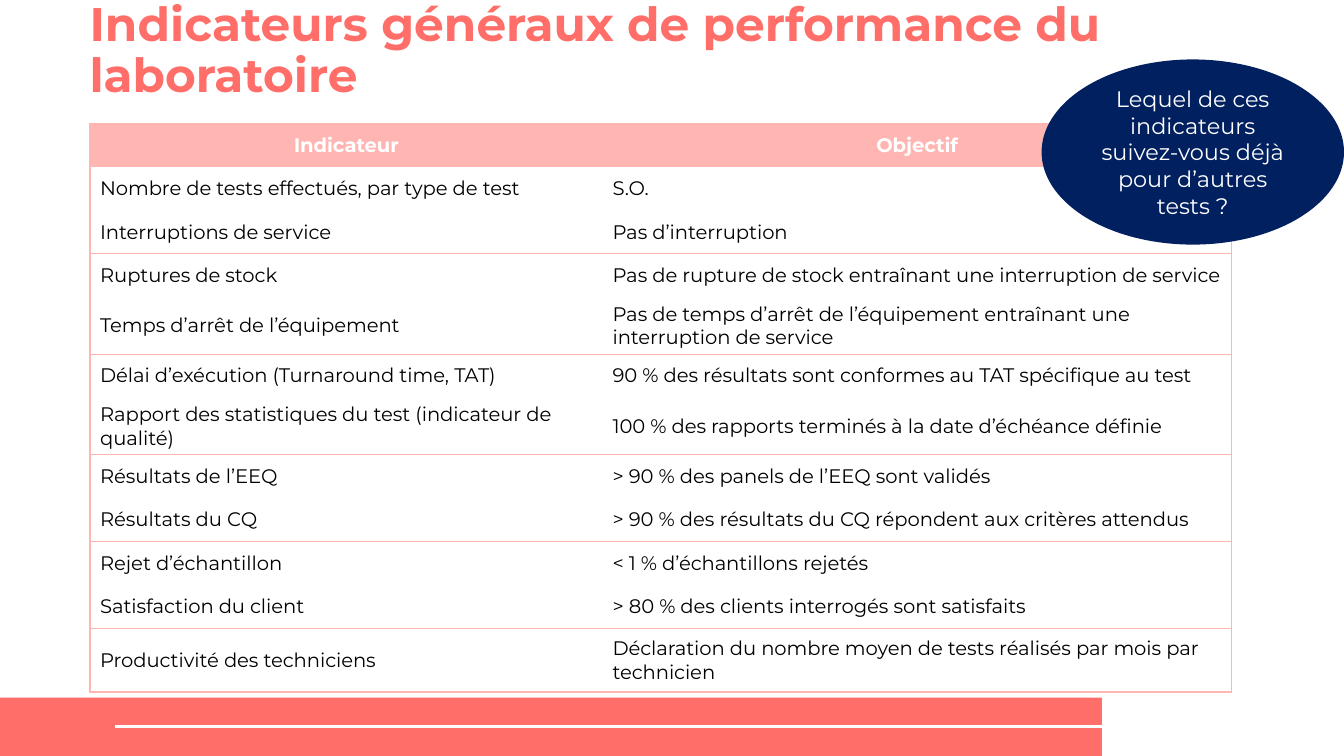
from pptx import Presentation
from pptx.dml.color import RGBColor
from pptx.enum.shapes import MSO_CONNECTOR, MSO_SHAPE
from pptx.enum.text import MSO_ANCHOR as Anchor, PP_ALIGN as Align
from pptx.oxml import parse_xml
from pptx.oxml.ns import nsdecls
from pptx.util import Inches, Pt

CORAL = RGBColor(0xFF, 0x6E, 0x68)
PINK = RGBColor(0xFF, 0xB6, 0xB3)
NAVY = RGBColor(0x00, 0x20, 0x60)
WHITE = RGBColor(0xFF, 0xFF, 0xFF)
BLACK = RGBColor(0, 0, 0)

# A 16:9 slide
deck = Presentation()
deck.slide_width = Inches(10)
deck.slide_height = deck.slide_width * 9 // 16
slide = deck.slides.add_slide(deck.slide_layouts[6])
shapes = slide.shapes


def share(left, top, width, height):
    """Turn percentages of the slide's width and height into lengths."""
    across, down = deck.slide_width / 100, deck.slide_height / 100
    return (round(left * across), round(top * down),
            round(width * across), round(height * down))


def write(frame, text, size, color, bold=False, align=Align.LEFT, anchor=Anchor.MIDDLE):
    frame.word_wrap = True
    frame.vertical_anchor = anchor
    paragraph = frame.paragraphs[0]
    paragraph.alignment = align
    run = paragraph.add_run()
    run.text = text
    run.font.name, run.font.size, run.font.bold = "Montserrat", Pt(size), bold
    run.font.color.rgb = color
    return paragraph


# Footer band with its white rule
band = shapes.add_shape(MSO_SHAPE.RECTANGLE, *share(0, 92.3, 82, 7.7))
band.shadow.inherit = False
band.fill.solid()
band.fill.fore_color.rgb = CORAL
band.line.fill.background()

rule = shapes.add_connector(MSO_CONNECTOR.STRAIGHT, *share(82.6, 96.05, 8.53, 96.05))
rule.line.color.rgb = WHITE
rule.line.width = Pt(1.5)
rule._element.spPr.append(parse_xml(f"<a:effectLst {nsdecls('a')}/>"))

# Title
title = shapes.add_textbox(*share(6.66, 0.6, 84.1, 12.98)).text_frame
title.margin_left = title.margin_right = title.margin_top = title.margin_bottom = 0
heading = write(title, "Indicateurs généraux de performance du laboratoire",
                25.2, CORAL, bold=True, anchor=Anchor.BOTTOM)
heading.line_spacing = 0.9

# Table of indicators, ruled off in pairs of rows
indicators = [
    ("Indicateur", "Objectif"),
    ("Nombre de tests effectués, par type de test", "S.O."),
    ("Interruptions de service", "Pas d’interruption"),
    ("Ruptures de stock", "Pas de rupture de stock entraînant une interruption de service"),
    ("Temps d’arrêt de l’équipement",
     "Pas de temps d’arrêt de l’équipement entraînant une interruption de service"),
    ("Délai d’exécution (Turnaround time, TAT)",
     "90 % des résultats sont conformes au TAT spécifique au test"),
    ("Rapport des statistiques du test (indicateur de qualité)",
     "100 % des rapports terminés à la date d’échéance définie"),
    ("Résultats de l’EEQ", "> 90 % des panels de l’EEQ sont validés"),
    ("Résultats du CQ", "> 90 % des résultats du CQ répondent aux critères attendus"),
    ("Rejet d’échantillon", "< 1 % d’échantillons rejetés"),
    ("Satisfaction du client", "> 80 % des clients interrogés sont satisfaits"),
    ("Productivité des techniciens",
     "Déclaration du nombre moyen de tests réalisés par mois par technicien"),
]
last = len(indicators) - 1
row_share, last_row_share = 5.75, 8.4
table = shapes.add_table(len(indicators), 2, *share(
    6.7, 16.33, 84.95, row_share * last + last_row_share)).table
table.horz_banding = False
for column, width in zip(table.columns, (38.13, 46.82)):
    column.width = share(0, 0, width, 0)[2]

for r, entries in enumerate(indicators):
    table.rows[r].height = share(0, 0, 0, last_row_share if r == last else row_share)[3]
    is_header = r == 0
    for c, entry in enumerate(entries):
        cell = table.cell(r, c)
        cell.margin_left = cell.margin_right = Pt(5.4)
        cell.margin_top = cell.margin_bottom = Pt(2.7)
        write(cell.text_frame, entry, 10.5, WHITE if is_header else BLACK, is_header,
              Align.CENTER if is_header else Align.LEFT)
        cell.vertical_anchor = Anchor.MIDDLE

        # Borders come before the fill in the cell's XML
        ruled = {"L": c == 0, "R": c == 1, "T": is_header or r % 2 == 1,
                 "B": r % 2 == 0 or r == last}
        for side, shown in ruled.items():
            paint = (f'<a:solidFill><a:srgbClr val="{PINK}"/></a:solidFill>'
                     if shown else "<a:noFill/>")
            cell._tc.get_or_add_tcPr().append(parse_xml(
                f'<a:ln{side} {nsdecls("a")} w="{Pt(0.75)}">{paint}</a:ln{side}>'))
        if is_header:
            cell.fill.solid()
            cell.fill.fore_color.rgb = PINK
        else:
            cell.fill.background()

# Question bubble
question = shapes.add_shape(MSO_SHAPE.OVAL, *share(77.5, 7.87, 22.5, 24.5))
question.shadow.inherit = False
question.fill.solid()
question.fill.fore_color.rgb = NAVY
question.line.fill.background()
write(question.text_frame, "Lequel de ces indicateurs suivez-vous déjà pour d’autres tests ?",
      12, WHITE, align=Align.CENTER)

deck.save("out.pptx")
